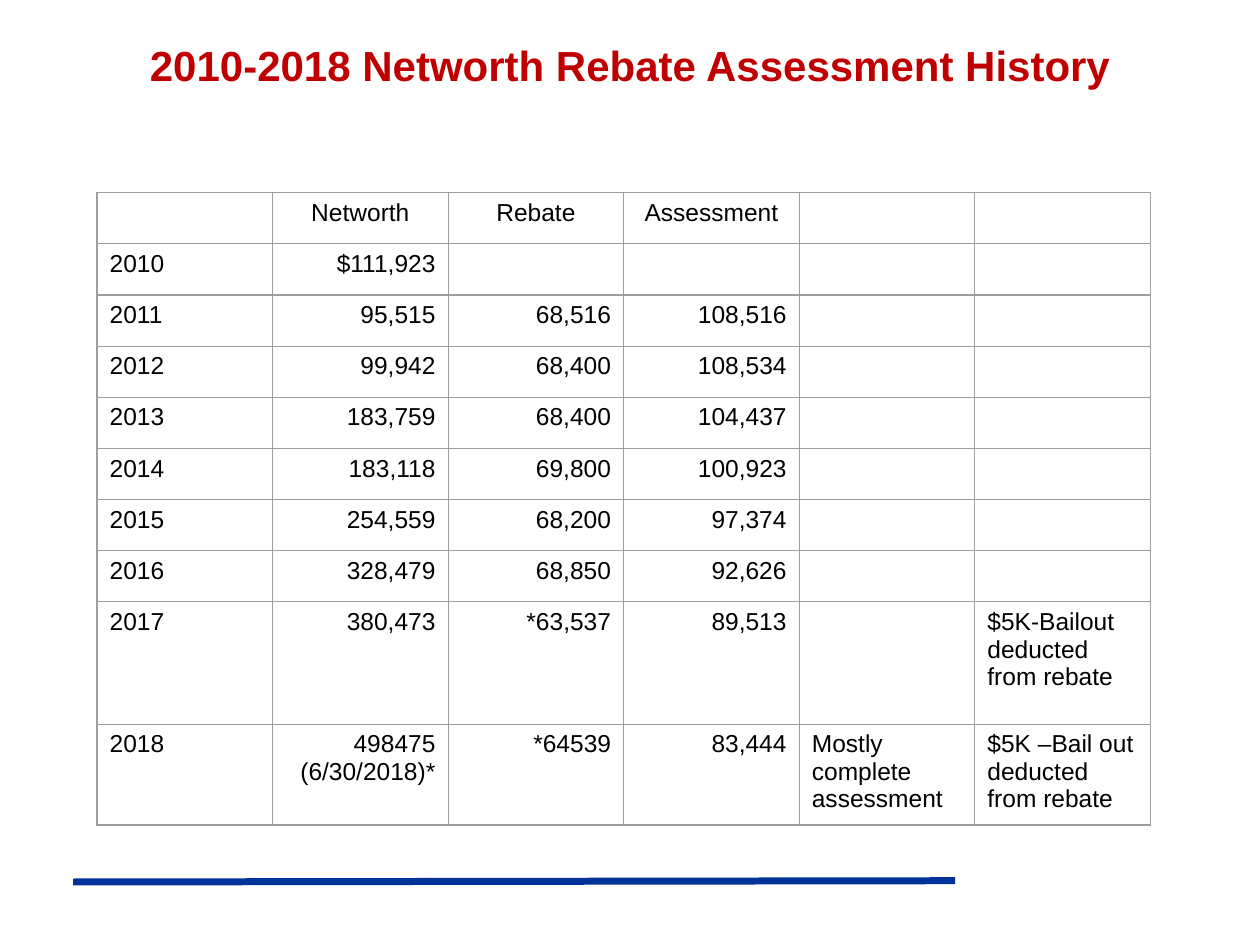
from lxml import etree
from pptx import Presentation
from pptx.dml.color import RGBColor
from pptx.enum import shapes, text
from pptx.oxml.ns import qn
from pptx.util import Inches, Pt

TITLE = "2010-2018 Networth Rebate Assessment History"
ROWS = [
    ("", "Networth", "Rebate", "Assessment", "", ""),
    ("2010", "$111,923", "", "", "", ""),
    ("2011", "95,515", "68,516", "108,516", "", ""),
    ("2012", "99,942", "68,400", "108,534", "", ""),
    ("2013", "183,759", "68,400", "104,437", "", ""),
    ("2014", "183,118", "69,800", "100,923", "", ""),
    ("2015", "254,559", "68,200", "97,374", "", ""),
    ("2016", "328,479", "68,850", "92,626", "", ""),
    ("2017", "380,473", "*63,537", "89,513", "", "$5K-Bailout deducted from rebate"),
    ("2018", "498475\n(6/30/2018)*", "*64539", "83,444",
     "Mostly complete assessment", "$5K –Bail out deducted from rebate"),
]
THEME = {
    "font": "Arial", "title_size": 24, "cell_size": 14,
    "title": "C00000", "ink": "000000", "rule": "003399", "border": "9E9E9E",
    "rule_width": 4, "border_width": 0.75,
}
LEFT, TOP, WIDTH = 0.77, 1.53, 8.36
YEAR_ROWS_HEIGHT = 3.25
TALL_ROWS = {"2017": 0.97, "2018": 0.76}
ALIGN = text.PP_ALIGN


def write(tf, content, size, color, align, bold=False):
    for i, line in enumerate(content.split("\n")):
        p = tf.paragraphs[0] if i == 0 else tf.add_paragraph()
        p.alignment = align
        p.font.size = Pt(size)
        if line:
            r = p.add_run()
            r.text = line
            r.font.name = THEME["font"]
            r.font.size = Pt(size)
            r.font.bold = bold
            r.font.color.rgb = RGBColor.from_string(color)


def add_borders(cell):
    props = cell._tc.get_or_add_tcPr()
    for i, side in enumerate(("lnL", "lnR", "lnT", "lnB")):
        ln = etree.Element(qn(f"a:{side}"), w=str(Pt(THEME["border_width"])))
        fill = etree.SubElement(ln, qn("a:solidFill"))
        etree.SubElement(fill, qn("a:srgbClr"), val=THEME["border"])
        props.insert(i, ln)


def add_rule(s):
    line = s.shapes.add_connector(shapes.MSO_CONNECTOR.STRAIGHT,
                                  Inches(0.58), Inches(7), Inches(7.58), Inches(6.99))
    line.line.color.rgb = RGBColor.from_string(THEME["rule"])
    line.line.width = Pt(THEME["rule_width"])
    etree.SubElement(line._element.spPr, qn("a:effectLst"))


def add_title(s):
    tf = s.shapes.add_textbox(0, Inches(0.02), Inches(10), Inches(0.98)).text_frame
    tf.word_wrap = True
    tf.vertical_anchor = text.MSO_ANCHOR.MIDDLE
    write(tf, TITLE, THEME["title_size"], THEME["title"], ALIGN.CENTER, True)


def add_history(s):
    row_height = YEAR_ROWS_HEIGHT / (len(ROWS) - len(TALL_ROWS))
    heights = [TALL_ROWS.get(row[0], row_height) for row in ROWS]
    columns = len(ROWS[0])
    table = s.shapes.add_table(len(ROWS), columns, Inches(LEFT), Inches(TOP),
                               Inches(WIDTH), Inches(sum(heights))).table
    table.first_row = table.horz_banding = False
    for column in table.columns:
        column.width = Inches(WIDTH / columns)
    for i, (row, height) in enumerate(zip(ROWS, heights)):
        table.rows[i].height = Inches(height)
        for j, content in enumerate(row):
            cell = table.cell(i, j)
            cell.fill.background()
            add_borders(cell)
            align = ALIGN.CENTER if i == 0 else ALIGN.RIGHT if 1 <= j <= 3 else ALIGN.LEFT
            write(cell.text_frame, content, THEME["cell_size"], THEME["ink"], align)


def main():
    prs = Presentation()
    prs.slide_width, prs.slide_height = Inches(10), Inches(7.5)
    s = prs.slides.add_slide(prs.slide_layouts[6])
    add_rule(s)
    add_title(s)
    add_history(s)
    prs.save("out.pptx")


if __name__ == "__main__":
    main()
